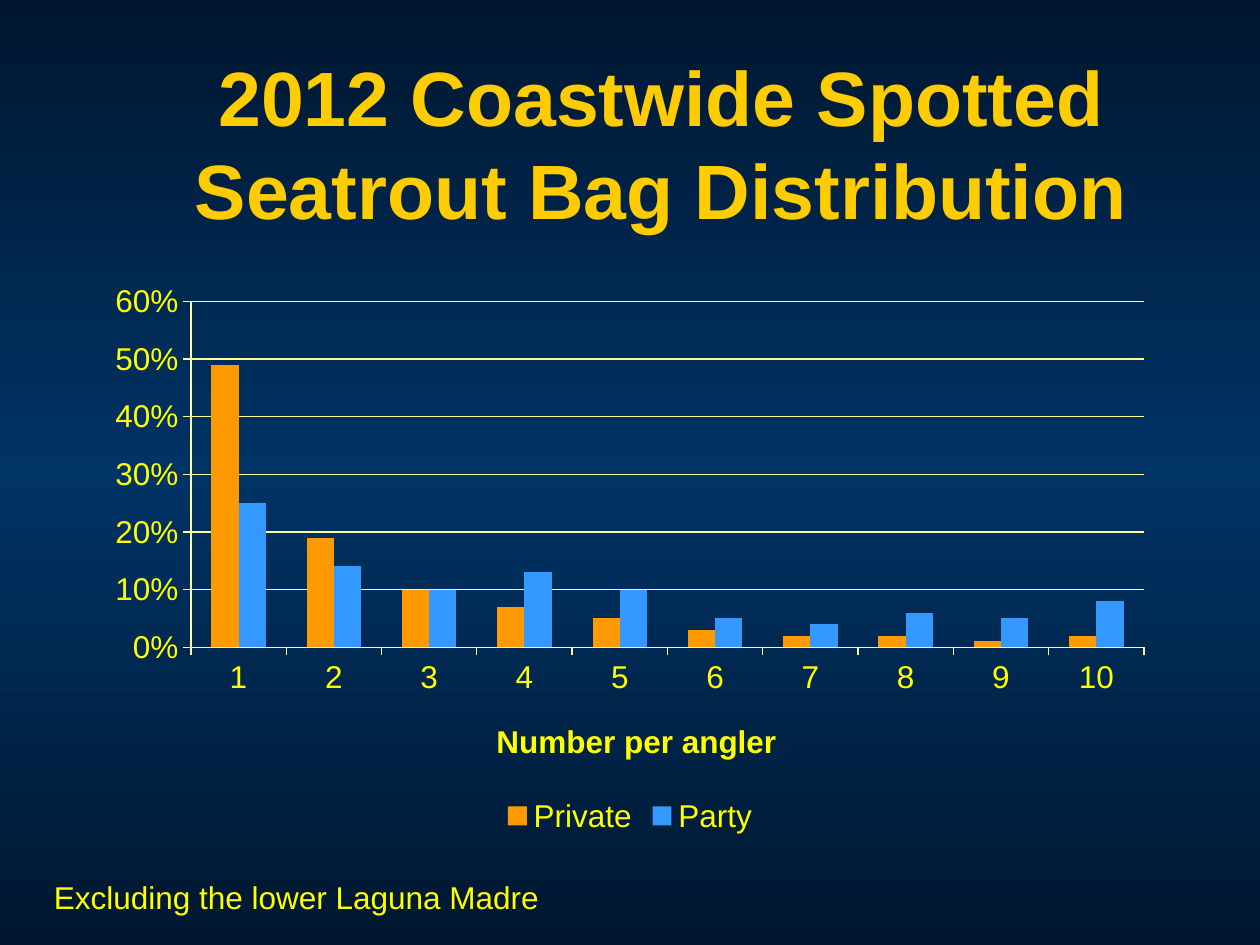
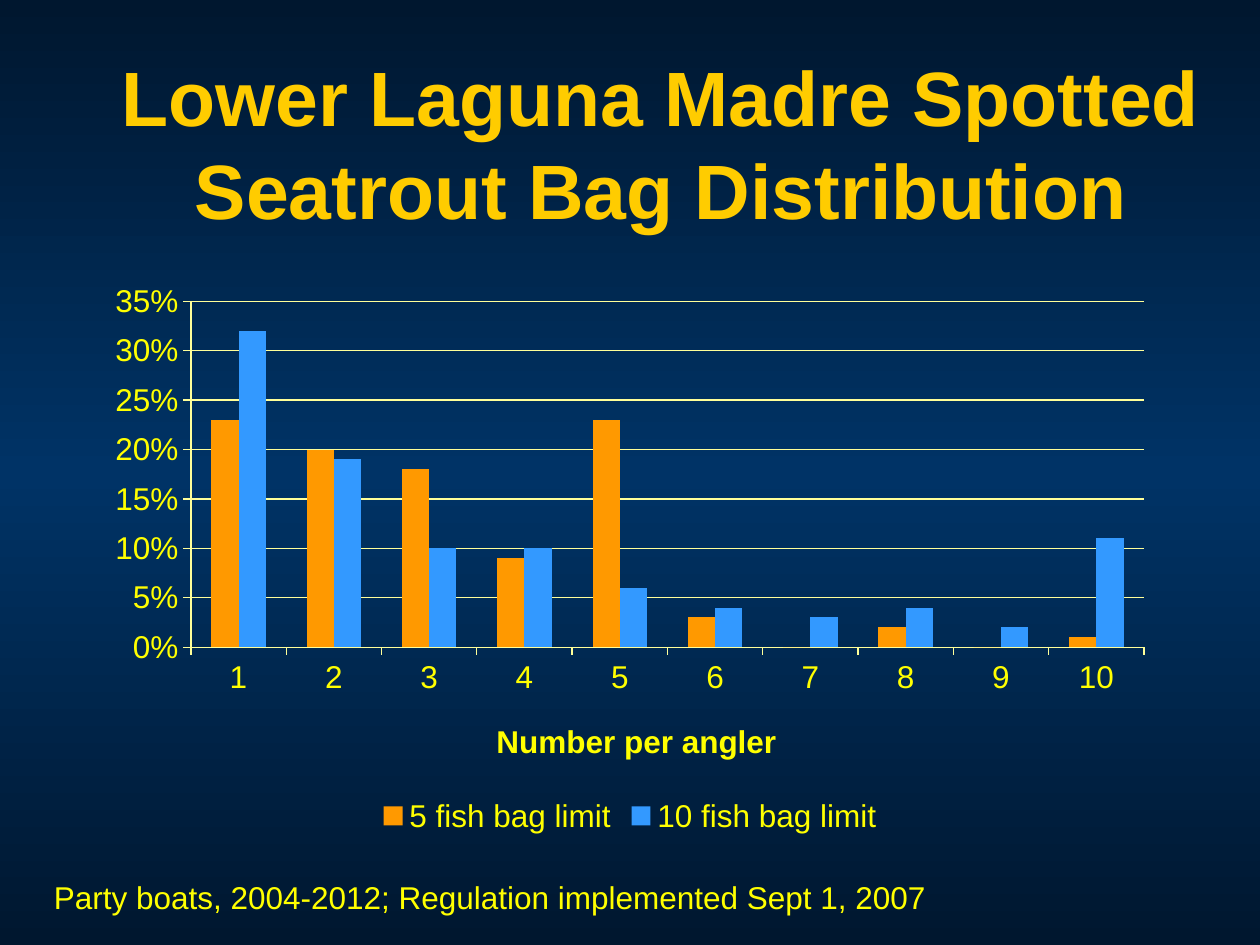
import copy
from dataclasses import dataclass
from typing import Any

import lxml.etree
import pptx
import pptx.chart.data
import pptx.dml.color
import pptx.enum.chart
import pptx.enum.text
import pptx.oxml.ns
import pptx.util

qn = pptx.oxml.ns.qn
Chart = pptx.enum.chart
Text = pptx.enum.text


@dataclass(frozen=True)
class Theme:
    """Colours and type sizes of the deck."""
    font: str = "Arial"
    edge: str = "00172F"
    core: str = "003366"
    head: str = "FFCC00"
    body: str = "FFFF00"
    rule: str = "FFFF99"
    bars: tuple[str, ...] = ("FF9900", "3399FF")
    big: int = 44
    small: int = 18


@dataclass(frozen=True)
class Box:
    """A place given in shares of the slide's size."""
    left: float
    top: float
    wide: float
    high: float


@dataclass(frozen=True)
class Page:
    """The content of one chart slide."""
    head: str
    rows: dict[str, tuple[float, ...]]
    top: float
    step: float
    note: str


LOOK = Theme()
WIDE, HIGH = pptx.util.Inches(10), pptx.util.Inches(7.5)
HEAD = Box(0.075, 0.067, 0.9, 0.167)
PLOT = Box(0.075, 0.289, 0.85, 0.6)
NOTE = Box(0.033, 0.923, 0.72, 0.053)
AXIS = "Number per angler"

PAGES = (
    Page("2012 Coastwide Spotted Seatrout Bag Distribution",
         {"Private": (0.49, 0.19, 0.1, 0.07, 0.05, 0.03, 0.02, 0.02, 0.01, 0.02),
          "Party": (0.25, 0.14, 0.1, 0.13, 0.1, 0.05, 0.04, 0.06, 0.05, 0.08)},
         0.6, 0.1, "Excluding the lower Laguna Madre"),
    Page("Lower Laguna Madre Spotted Seatrout Bag Distribution",
         {"5 fish bag limit": (0.23, 0.2, 0.18, 0.09, 0.23, 0.03, 0, 0.02, 0, 0.01),
          "10 fish bag limit": (0.32, 0.19, 0.1, 0.1, 0.06, 0.04, 0.03, 0.04, 0.02, 0.11)},
         0.35, 0.05, "Party boats, 2004-2012; Regulation implemented Sept 1, 2007"),
)


def tint(code: str) -> pptx.dml.color.RGBColor:
    """Return the colour for a hex code."""
    return pptx.dml.color.RGBColor.from_string(code)


def apply(item: Any, **form: Any) -> None:
    """Set each format value on an item."""
    for name, value in form.items():
        setattr(item, name, value)


def style(font: Any, size: int, code: str, bold: bool = False) -> None:
    """Give a font the deck's face, a size and a colour."""
    apply(font, name=LOOK.font, size=pptx.util.Pt(size), bold=bold)
    font.color.rgb = tint(code)


def frame(box: Box) -> tuple[int, int, int, int]:
    """Turn shares into slide lengths."""
    return (round(box.left * WIDE), round(box.top * HIGH),
            round(box.wide * WIDE), round(box.high * HIGH))


def write(slide: Any, box: Box, text: str, size: int, code: str,
          bold: bool = False, **form: Any) -> Any:
    """Add a line of styled text and return its paragraph."""
    body = slide.shapes.add_textbox(*frame(box)).text_frame
    apply(body, **form)
    para = body.paragraphs[0]
    para.text = text
    style(para.runs[0].font, size, code, bold)
    return para


def place(node: Any, slot: int, **parts: Any) -> None:
    """Fix the layout of a chart part in shares of the chart."""
    for old in node.findall(qn("c:layout")):
        node.remove(old)
    layout = lxml.etree.Element(qn("c:layout"))
    manual = lxml.etree.SubElement(layout, qn("c:manualLayout"))
    for name, value in parts.items():
        lxml.etree.SubElement(manual, qn(f"c:{name}")).set("val", str(value))
    node.insert(slot, layout)


def rule(line: Any) -> None:
    """Draw a line in the thin rule style."""
    line.width = pptx.util.Pt(0.75)
    line.color.rgb = tint(LOOK.rule)


def graph(slide: Any, page: Page) -> None:
    """Add the column chart of a page."""
    data = pptx.chart.data.CategoryChartData(number_format="0%")
    data.categories = [str(count) for count in range(1, 11)]
    for name, row in page.rows.items():
        data.add_series(name, row)
    chart = slide.shapes.add_chart(
        Chart.XL_CHART_TYPE.COLUMN_CLUSTERED, *frame(PLOT), data).chart
    style(chart.font, LOOK.small, LOOK.body)
    apply(chart, has_title=False, has_legend=True)
    apply(chart.legend, position=Chart.XL_LEGEND_POSITION.BOTTOM,
          include_in_layout=False)
    plot = chart.plots[0]
    apply(plot, gap_width=150, overlap=0, vary_by_categories=False)
    for series, code in zip(plot.series, LOOK.bars):
        series.format.fill.solid()
        series.format.fill.fore_color.rgb = tint(code)
    base, side = chart.category_axis, chart.value_axis
    for axis in (base, side):
        axis.major_tick_mark = Chart.XL_TICK_MARK.OUTSIDE
        rule(axis.format.line)
    apply(side, minimum_scale=0, maximum_scale=page.top, major_unit=page.step,
          has_major_gridlines=True)
    rule(side.major_gridlines.format.line)
    apply(side.tick_labels, number_format="0%", number_format_is_linked=False)
    title = base.axis_title
    title.text_frame.text = AXIS
    style(title.text_frame.paragraphs[0].runs[0].font, LOOK.small, LOOK.body, True)
    place(title.element if hasattr(title, "element") else title._element, 1,
          xMode="edge", yMode="edge", x=0.37, y=0.78)
    area = next(chart.element.iter(qn("c:plotArea"))) if hasattr(
        chart, "element") else next(chart._chartSpace.iter(qn("c:plotArea")))
    place(area, 0, layoutTarget="inner", xMode="edge", yMode="edge",
          x=0.09, y=0.05, w=0.89, h=0.61)


def shade(master: Any) -> None:
    """Give all slides the banded gradient."""
    fill = master.background.fill
    fill.gradient()
    fill.gradient_angle = 90
    stops = next(master.element.iter(qn("a:gsLst")))
    stops.append(copy.deepcopy(stops[0]))
    codes = (LOOK.edge, LOOK.core, LOOK.edge)
    for rank, (stop, code) in enumerate(zip(fill.gradient_stops, codes)):
        stop.position = rank / 2
        stop.color.rgb = tint(code)


def main() -> None:
    """Build and save the deck."""
    deck = pptx.Presentation()
    apply(deck, slide_width=WIDE, slide_height=HIGH)
    shade(deck.slide_master)
    for page in PAGES:
        slide = deck.slides.add_slide(deck.slide_layouts[6])
        head = write(slide, HEAD, page.head, LOOK.big, LOOK.head, True,
                     word_wrap=True, vertical_anchor=Text.MSO_ANCHOR.MIDDLE)
        head.alignment = Text.PP_ALIGN.CENTER
        graph(slide, page)
        note = write(slide, NOTE, page.note, LOOK.small, LOOK.body,
                     word_wrap=False, auto_size=Text.MSO_AUTO_SIZE.SHAPE_TO_FIT_TEXT)
        note.alignment = Text.PP_ALIGN.LEFT
    deck.save("out.pptx")


if __name__ == "__main__":
    main()
